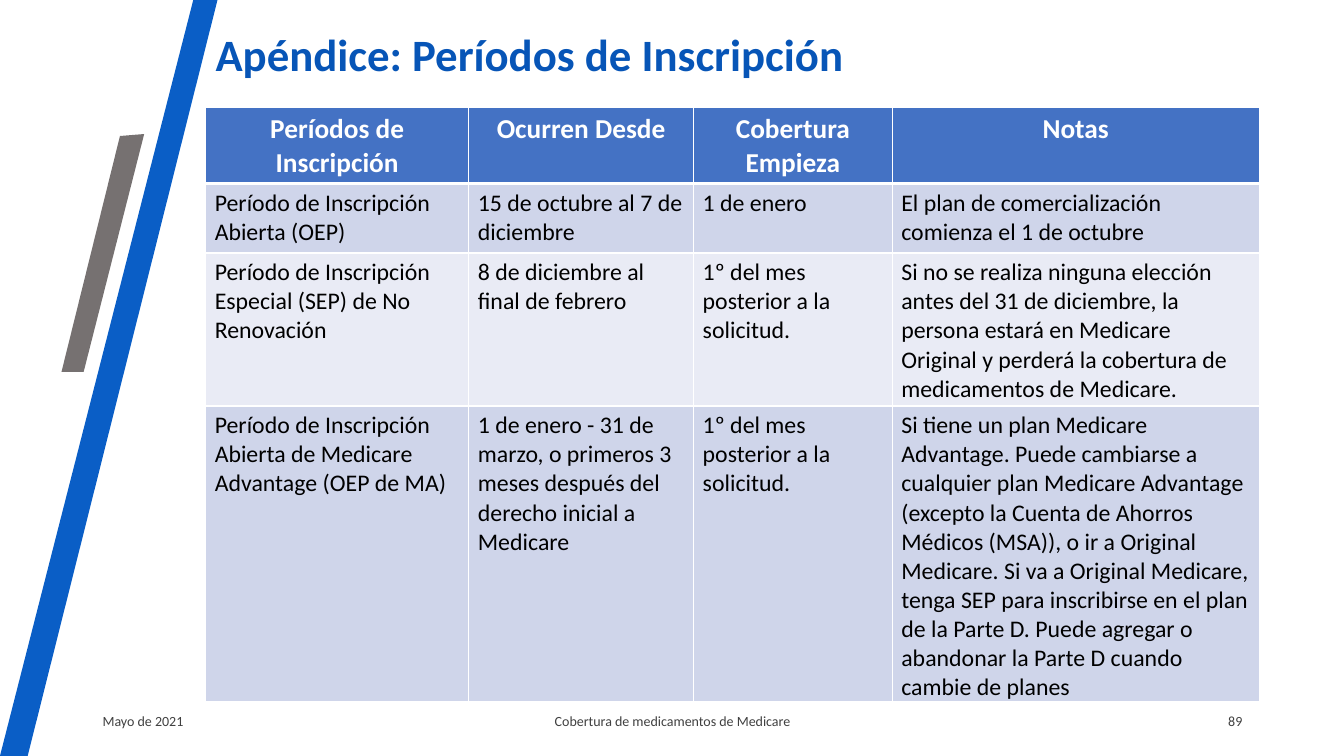
"""Builds the appendix slide on Medicare enrolment periods."""
from lxml import etree
from pptx import Presentation
from pptx import util as u
from pptx.dml.color import RGBColor
from pptx.enum import text
from pptx.oxml.ns import qn

TITLE = "Apéndice: Períodos de Inscripción"
HEADER = ["Períodos de Inscripción", "Ocurren Desde", "Cobertura Empieza", "Notas"]
PERIODS = [
    ["Período de Inscripción Abierta (OEP)",
     "15 de octubre al 7 de diciembre",
     "1 de enero",
     "El plan de comercialización comienza el 1 de octubre"],
    ["Período de Inscripción Especial (SEP) de No Renovación",
     "8 de diciembre al final de febrero",
     "1º del mes posterior a la solicitud.",
     "Si no se realiza ninguna elección antes del 31 de diciembre, la persona "
     "estará en Medicare Original y perderá la cobertura de medicamentos de Medicare."],
    ["Período de Inscripción Abierta de Medicare Advantage (OEP de MA)",
     "1 de enero - 31 de marzo, o primeros 3 meses después del derecho inicial a Medicare",
     "1º del mes posterior a la solicitud.",
     "Si tiene un plan Medicare Advantage. Puede cambiarse a cualquier plan Medicare "
     "Advantage (excepto la Cuenta de Ahorros Médicos (MSA)), o ir a Original Medicare. "
     "Si va a Original Medicare, tenga SEP para inscribirse en el plan de la Parte D. "
     "Puede agregar o abandonar la Parte D cuando cambie de planes"],
]
ALIGN = text.PP_ALIGN
FOOTER = [
    ("Mayo de 2021", 0.92, 3, ALIGN.LEFT),
    ("Cobertura de medicamentos de Medicare", 4.42, 4.5, ALIGN.CENTER),
    ("89", 9.42, 3, ALIGN.RIGHT),
]
STRIPES = [
    ("blue", [(1.92, -0.01), (2.16, -0.01), (0.27, 7.52), (0, 7.5)]),
    ("gray", [(1.19, 1.35), (1.43, 1.33), (0.83, 3.69), (0.61, 3.69)]),
]
SLIDE_W, SLIDE_H = 13.33, 7.5
LEFT, TABLE_TOP = 2.04, 1.07
COLS = [2.61, 2.23, 1.97, 3.64]
ROWS = [0.52, 0.69, 1.29, 2.79]
FOOT_TOP, FOOT_H = 6.95, 0.4

THEME = {
    "blue": "0A5EC6", "gray": "767171", "line": "FFFFFF",
    "head_fill": "4472C4", "bands": ["CFD5EA", "E9EBF5"],
    "title": {"size": 32, "color": "0755B7", "bold": True},
    "head": {"size": 19.5, "color": "FFFFFF", "bold": True},
    "body": {"size": 17, "color": "000000", "bold": False},
    "foot": {"size": 10, "color": "404040", "bold": False},
}


def write(tf, words, style, align=ALIGN.LEFT):
    p = tf.paragraphs[0]
    p.alignment = align
    r = p.add_run()
    r.text = words
    look = THEME[style]
    font = {"name": "Calibri", "size": u.Pt(look["size"]), "bold": look["bold"]}
    for name, value in font.items():
        setattr(r.font, name, value)
    r.font.color.rgb = RGBColor.from_string(look["color"])
    return p


def add_text(s, box, words, style, align=ALIGN.LEFT):
    tf = s.shapes.add_textbox(*map(u.Inches, box)).text_frame
    tf.word_wrap = True
    tf.vertical_anchor = text.MSO_ANCHOR.MIDDLE
    return write(tf, words, style, align)


def add_stripe(s, color, points):
    fb = s.shapes.build_freeform(*map(u.Inches, points[0]), scale=1.0)
    fb.add_line_segments([tuple(map(u.Inches, pt)) for pt in points[1:]], close=True)
    sp = fb.convert_to_shape()
    sp.shadow.inherit = False
    sp.fill.solid()
    sp.fill.fore_color.rgb = RGBColor.from_string(THEME[color])
    sp.line.fill.background()


def set_borders(cell, widths):
    tc_pr = cell._tc.get_or_add_tcPr()
    for i, (side, width) in enumerate(widths.items()):
        ln = etree.Element(qn(f"a:ln{side}"), w=str(u.Pt(width)))
        fill = etree.SubElement(ln, qn("a:solidFill"))
        etree.SubElement(fill, qn("a:srgbClr"), val=THEME["line"])
        tc_pr.insert(i, ln)


def add_periods(s):
    frame = s.shapes.add_table(len(ROWS), len(COLS), u.Inches(LEFT), u.Inches(TABLE_TOP),
                               u.Inches(sum(COLS)), u.Inches(sum(ROWS)))
    table = frame.table
    for col, width in zip(table.columns, COLS):
        col.width = u.Inches(width)
    for row, height in zip(table.rows, ROWS):
        row.height = u.Inches(height)
    margins = {"margin_left": 0.09, "margin_right": 0.09,
               "margin_top": 0.05, "margin_bottom": 0.05}
    for i, entries in enumerate([HEADER] + PERIODS):
        head = i == 0
        fill = THEME["head_fill"] if head else THEME["bands"][(i - 1) % 2]
        for j, words in enumerate(entries):
            cell = table.cell(i, j)
            for name, value in margins.items():
                setattr(cell, name, u.Inches(value))
            cell.fill.solid()
            cell.fill.fore_color.rgb = RGBColor.from_string(fill)
            set_borders(cell, {"L": 1, "R": 1, "T": 3 if i == 1 else 1, "B": 3 if head else 1})
            write(cell.text_frame, words, "head" if head else "body",
                  ALIGN.CENTER if head else ALIGN.LEFT)


def main():
    prs = Presentation()
    prs.slide_width, prs.slide_height = u.Inches(SLIDE_W), u.Inches(SLIDE_H)
    s = prs.slides.add_slide(prs.slide_layouts[6])
    for color, points in STRIPES:
        add_stripe(s, color, points)
    for words, left, width, align in FOOTER:
        add_text(s, (left, FOOT_TOP, width, FOOT_H), words, "foot", align)
    add_periods(s)
    add_text(s, (LEFT, 0.01, 10.76, 1.12), TITLE, "title").line_spacing = 0.9
    prs.save("out.pptx")


if __name__ == "__main__":
    main()
